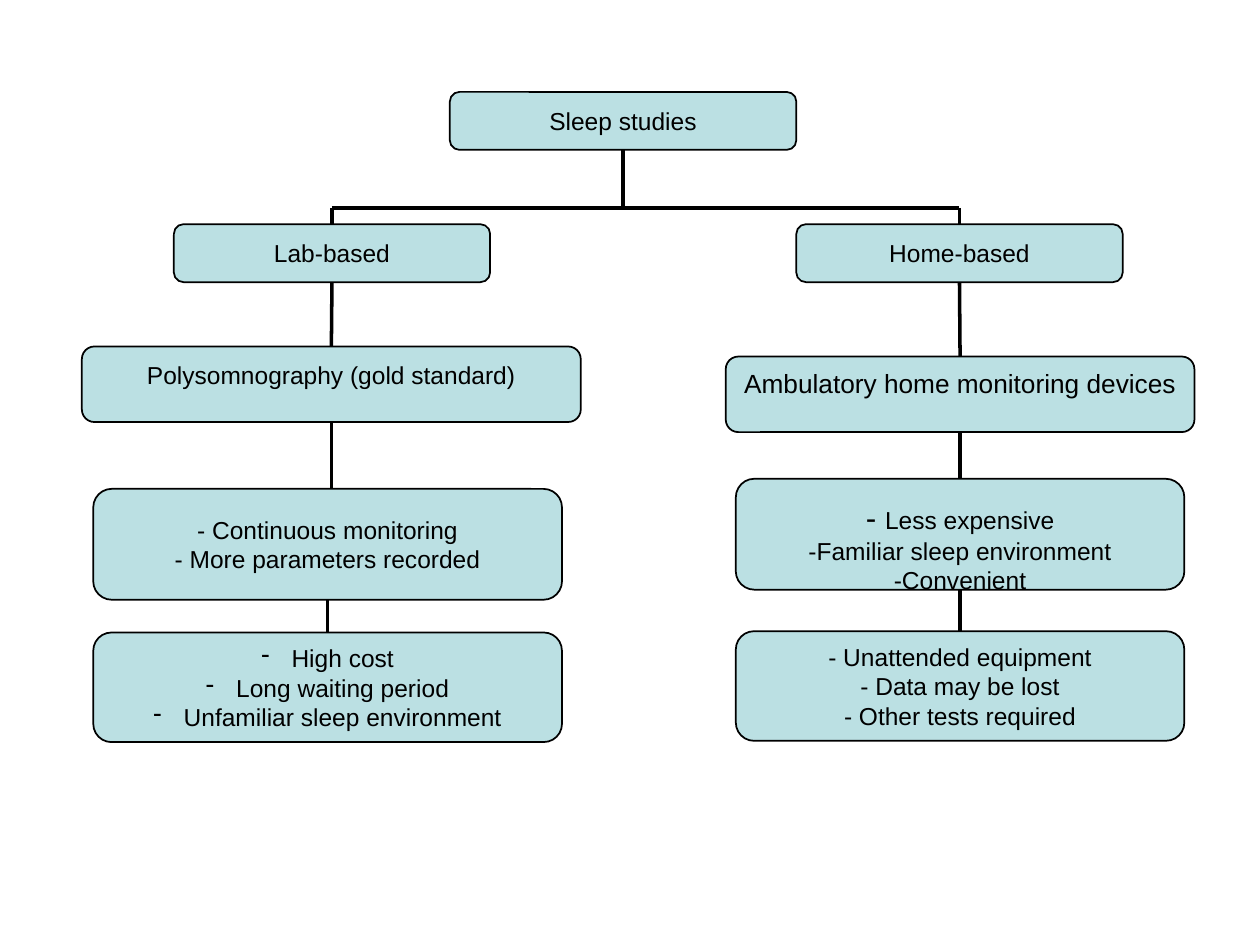
import pptx
import pptx.dml.color
import pptx.enum.shapes
import pptx.enum.text
import pptx.oxml.ns
import pptx.util
import lxml.etree

theme = {
    "font": "Arial",
    "fill": pptx.dml.color.RGBColor.from_string("BBE0E3"),
    "ink": pptx.dml.color.RGBColor.from_string("000000"),
    "body": 14,
    "device": 15,
    "dash": 18,
    "border": 1,
    "link": 2,
}

presentation = pptx.Presentation()
presentation.slide_width = pptx.util.Inches(10)
presentation.slide_height = pptx.util.Inches(7.5)
slide = presentation.slides.add_slide(presentation.slide_layouts[6])
column = presentation.slide_width / 100
row = presentation.slide_height / 75


def write_text(shape, lines, size=theme["body"], inset=(1, 0.5), top=None, bullet=False):
    frame = shape.text_frame
    frame.word_wrap = True
    frame.margin_left = frame.margin_right = int(inset[0] * column)
    frame.margin_top = frame.margin_bottom = int(inset[1] * row)
    frame.vertical_anchor = pptx.enum.text.MSO_ANCHOR.MIDDLE
    if top is not None:
        frame.vertical_anchor = pptx.enum.text.MSO_ANCHOR.TOP
        frame.margin_top = int(top * row)
    for index, line in enumerate(lines):
        paragraph = frame.add_paragraph() if index else frame.paragraphs[0]
        paragraph.alignment = pptx.enum.text.PP_ALIGN.CENTER
        if bullet:
            properties = paragraph._p.get_or_add_pPr()
            properties.set("marL", str(int(2.4 * column)))
            properties.set("indent", str(int(-2.4 * column)))
            mark = lxml.etree.SubElement(properties, pptx.oxml.ns.qn("a:buChar"))
            mark.set("char", "-")
        runs = [(line, size)] if isinstance(line, str) else line
        for text, points in runs:
            run = paragraph.add_run()
            run.text = text
            run.font.name = theme["font"]
            run.font.size = pptx.util.Pt(points)
            run.font.color.rgb = theme["ink"]


def add_link(start, end, begin_shape=None, end_shape=None):
    connector = slide.shapes.add_connector(
        pptx.enum.shapes.MSO_CONNECTOR.STRAIGHT, *(int(value) for value in start + end))
    if begin_shape is not None:
        connector.begin_connect(begin_shape, 2)
    if end_shape is not None:
        connector.end_connect(end_shape, 0)
    connector.line.color.rgb = theme["ink"]
    connector.line.width = pptx.util.Pt(theme["link"])
    lxml.etree.SubElement(connector._element.spPr, pptx.oxml.ns.qn("a:effectLst"))


heading = {"inset": (0.7, 0.3)}
boxes = [
    ("root", (35.7, 7.3, 27.5, 4.6), ["Sleep studies"], heading),
    ("lab", (13.8, 17.8, 25.1, 4.6), ["Lab-based"], heading),
    ("lab", (6.5, 27.5, 39.6, 6), ["Polysomnography (gold standard)"], {"top": 0.8}),
    ("lab", (7.4, 38.8, 37.2, 8.8),
     ["- Continuous monitoring", "- More parameters recorded"], {}),
    ("lab", (7.4, 50.2, 37.2, 8.7),
     ["High cost", "Long waiting period", "Unfamiliar sleep environment"], {"bullet": True}),
    ("home", (63.2, 17.8, 25.9, 4.6), ["Home-based"], heading),
    ("home", (57.6, 28.3, 37.2, 6), ["Ambulatory home monitoring devices"],
     {"size": theme["device"], "inset": (0.7, 0.3), "top": 0.6}),
    ("home", (58.4, 38, 35.6, 8.8),
     [[("- ", theme["dash"]), ("Less expensive", theme["body"])],
      "-Familiar sleep environment", "-Convenient"], {"top": 1.1}),
    ("home", (58.4, 50.1, 35.6, 8.7),
     ["- Unattended equipment", "- Data may be lost", "- Other tests required"], {}),
]

branches = {"root": [], "lab": [], "home": []}
for branch, (left, top, width, height), lines, text_format in boxes:
    shape = slide.shapes.add_shape(
        pptx.enum.shapes.MSO_SHAPE.ROUNDED_RECTANGLE,
        int(left * column), int(top * row), int(width * column), int(height * row))
    shape.shadow.inherit = False
    shape.fill.solid()
    shape.fill.fore_color.rgb = theme["fill"]
    shape.line.color.rgb = theme["ink"]
    shape.line.width = pptx.util.Pt(theme["border"])
    write_text(shape, lines, **text_format)
    branches[branch].append(shape)

root = branches["root"][0]
root_center = root.left + root.width / 2
bar = 16.5 * row
add_link((root_center, root.top + root.height), (root_center, bar), begin_shape=root)
bar_ends = []
for branch in ("lab", "home"):
    chain = branches[branch]
    center = chain[0].left + chain[0].width / 2
    bar_ends.append((center, bar))
    add_link((center, bar), (center, chain[0].top), end_shape=chain[0])
    for upper, lower in zip(chain, chain[1:]):
        center = upper.left + upper.width / 2
        aligned = abs(lower.left + lower.width / 2 - center) < 0.2 * column
        add_link((center, upper.top + upper.height), (center, lower.top),
                 begin_shape=upper, end_shape=lower if aligned else None)
add_link(*bar_ends)

presentation.save("out.pptx")
